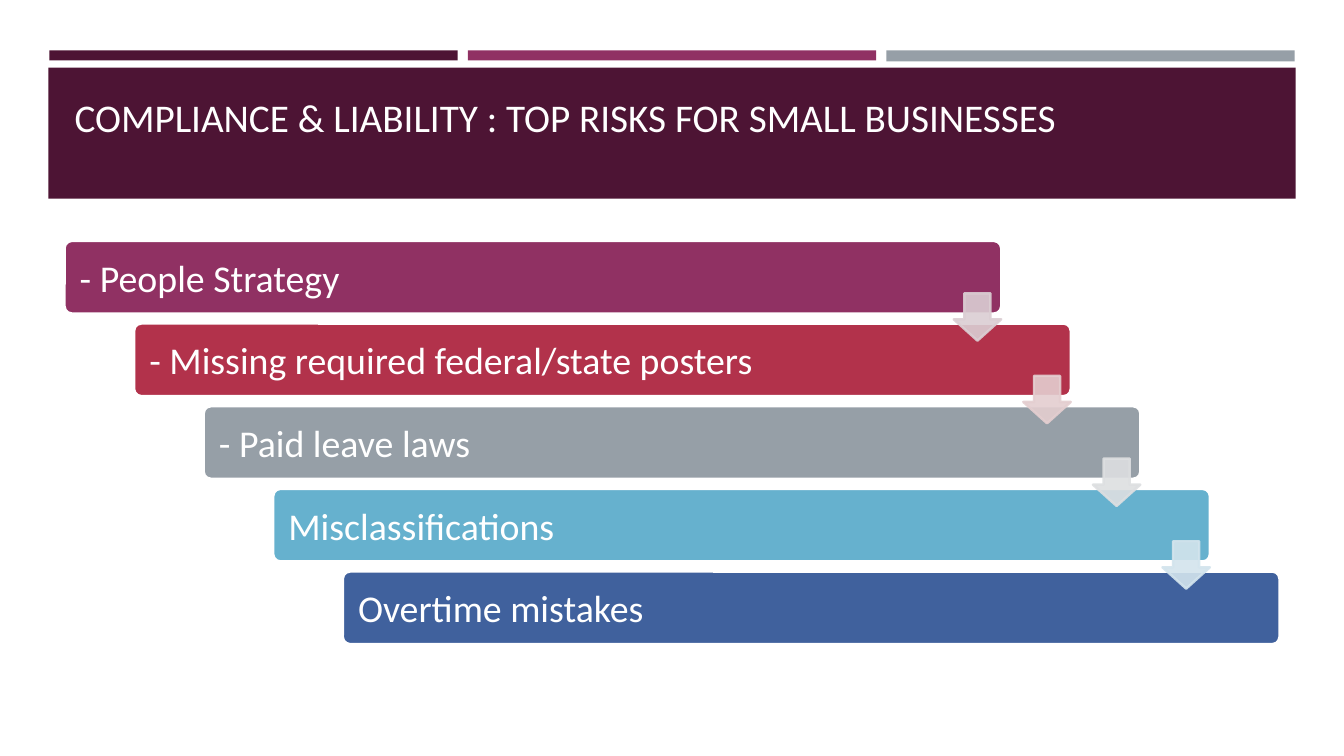
"""Build the slide on top compliance risks for small businesses."""
from dataclasses import dataclass

from lxml import etree
from pptx import Presentation
from pptx import util as u
from pptx.dml import color
from pptx.enum import shapes, text
from pptx.oxml import ns

FONT = "Calibri"
WHITE = "FFFFFF"
PLUM = "4D1434"
BAR_LEFT, BAR_TOP, BAR_WIDTH, BAR_HEIGHT = 0.64, 2.39, 9.29, 0.72
STEP_X, STEP_Y = 0.69, 0.82
ARROW_X, ARROW_Y, ARROW_SIZE = 8.82, 0.52, 0.47


@dataclass(frozen=True)
class Risk:
    label: str
    fill: str
    arrow: str | None = None


@dataclass(frozen=True)
class Block:
    left: float
    top: float
    width: float
    height: float
    fill: str


RISKS = [
    Risk("- People Strategy", "903163", "DBCED3"),
    Risk("- Missing required federal/state posters", "B2324B", "E4CED0"),
    Risk("- Paid leave laws", "969FA7", "DDDFE1"),
    Risk("Misclassifications", "66B1CE", "D3E4ED"),
    Risk("Overtime mistakes", "40619D"),
]
HEADER = [
    Block(0.49, 0.5, 4.05, 0.1, PLUM),
    Block(8.79, 0.5, 4.05, 0.11, "969FA7"),
    Block(4.64, 0.5, 4.05, 0.1, "903163"),
    Block(0.48, 0.67, 12.37, 1.3, PLUM),
]


def rgb(value: str) -> color.RGBColor:
    """Turn a hex string into a colour."""
    return color.RGBColor.from_string(value)


def add_block(slide, kind, block: Block, outline: str | None = None):
    """Draw one filled preset shape, outlined when a colour is given."""
    shape = slide.shapes.add_shape(
        kind, *map(u.Inches, (block.left, block.top, block.width, block.height)))
    shape.shadow.inherit = False
    shape.fill.solid()
    shape.fill.fore_color.rgb = rgb(block.fill)
    if outline:
        shape.line.color.rgb = rgb(outline)
        shape.line.width = u.Pt(1.75)
    else:
        shape.line.fill.background()
    return shape


def write(shape, words: str, size: float, anchor) -> None:
    """Put one white, left-aligned paragraph into a shape."""
    frame = shape.text_frame
    frame.word_wrap = True
    frame.vertical_anchor = anchor
    paragraph = frame.paragraphs[0]
    paragraph.text = words
    paragraph.alignment = text.PP_ALIGN.LEFT
    paragraph.font.name = FONT
    paragraph.font.size = u.Pt(size)
    paragraph.font.color.rgb = rgb(WHITE)


def add_title(slide) -> None:
    """Place the title in front of the header band."""
    title = slide.shapes.title
    title.left, title.top = u.Inches(0.64), u.Inches(0.77)
    title.width, title.height = u.Inches(12.06), u.Inches(1.11)
    write(title, "COMPLIANCE & LIABILITY : TOP RISKS FOR SMALL BUSINESSES",
          28, text.MSO_ANCHOR.BOTTOM)
    title.text_frame.margin_bottom = u.Inches(0.48)
    title.text_frame.paragraphs[0].line_spacing = 0.9
    slide.shapes.element.append(title.element)


def add_bar(slide, index: int, risk: Risk) -> None:
    """Draw one step of the staircase with its label."""
    block = Block(BAR_LEFT + index * STEP_X, BAR_TOP + index * STEP_Y,
                  BAR_WIDTH, BAR_HEIGHT, risk.fill)
    bar = add_block(slide, shapes.MSO_SHAPE.ROUNDED_RECTANGLE, block, WHITE)
    bar.adjustments[0] = 0.1
    write(bar, risk.label, 27, text.MSO_ANCHOR.MIDDLE)
    bar.text_frame.margin_left = u.Inches(0.13)


def add_arrow(slide, index: int, fill: str) -> None:
    """Draw the translucent arrow leading to the next step."""
    block = Block(BAR_LEFT + index * STEP_X + ARROW_X,
                  BAR_TOP + index * STEP_Y + ARROW_Y,
                  ARROW_SIZE, ARROW_SIZE, fill)
    arrow = add_block(slide, shapes.MSO_SHAPE.DOWN_ARROW, block, fill)
    arrow.adjustments[0] = 0.55
    arrow.adjustments[1] = 0.45
    for tint in arrow.element.spPr.iter(ns.qn("a:srgbClr")):
        etree.SubElement(tint, ns.qn("a:alpha"), val="90000")


def main() -> None:
    """Build and save the presentation."""
    presentation = Presentation()
    presentation.slide_width = u.Inches(13.33)
    presentation.slide_height = u.Inches(7.5)
    slide = presentation.slides.add_slide(presentation.slide_layouts[5])
    for block in HEADER:
        add_block(slide, shapes.MSO_SHAPE.RECTANGLE, block)
    add_title(slide)
    for index, risk in enumerate(RISKS):
        add_bar(slide, index, risk)
    for index, risk in enumerate(RISKS):
        if risk.arrow:
            add_arrow(slide, index, risk.arrow)
    presentation.save("out.pptx")


if __name__ == "__main__":
    main()
